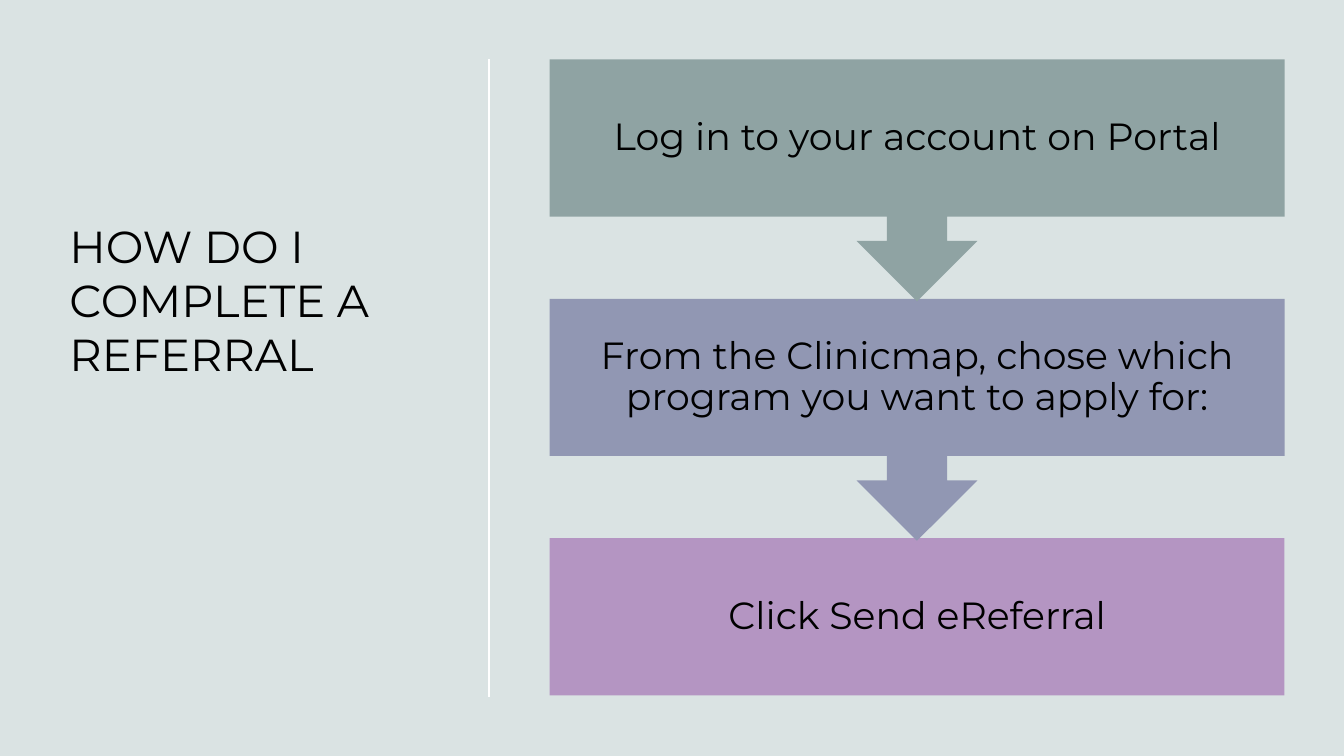
from dataclasses import dataclass

from lxml.etree import SubElement
from pptx import Presentation
from pptx.dml.color import RGBColor
from pptx.enum.shapes import MSO_CONNECTOR, MSO_SHAPE
from pptx.enum.text import MSO_ANCHOR, PP_ALIGN
from pptx.oxml.ns import qn
from pptx.slide import Slide
from pptx.text.text import TextFrame
from pptx.util import Inches, Pt

FONT = "Montserrat"
TOP, LAST = 0.59, 5.34


@dataclass
class Step:
    text: str
    fill: str
    kind: MSO_SHAPE
    height: float


STEPS = [
    Step("Log in to your account on Portal", "8FA3A3", MSO_SHAPE.DOWN_ARROW_CALLOUT, 2.4),
    Step("From the Clinicmap, chose which program you want to apply for:",
         "9197B3", MSO_SHAPE.DOWN_ARROW_CALLOUT, 2.4),
    Step("Click Send eReferral", "B495C2", MSO_SHAPE.RECTANGLE, 1.56),
]


def color(code: str) -> RGBColor:
    return RGBColor.from_string(code)


def write(frame: TextFrame, text: str, size: int) -> None:
    frame.word_wrap = True
    frame.text = text
    for run in frame.paragraphs[0].runs:
        run.font.name = FONT
        run.font.size = Pt(size)
        run.font.color.rgb = color("000000")


def add_title(slide: Slide) -> None:
    box = slide.shapes.add_textbox(Inches(0.59), Inches(2.12), Inches(3.56), Inches(1.75))
    write(box.text_frame, "HOW DO I COMPLETE A REFERRAL", 32)


def add_rule(slide: Slide) -> None:
    rule = slide.shapes.add_connector(
        MSO_CONNECTOR.STRAIGHT, Inches(4.85), Inches(TOP), Inches(4.85), Inches(6.91))
    rule.line.color.rgb = color("FFFFFF")
    rule.line.width = Pt(1)
    SubElement(rule.element.spPr, qn("a:effectLst"))


def add_step(slide: Slide, step: Step, top: float) -> None:
    shape = slide.shapes.add_shape(
        step.kind, Inches(5.45), Inches(top), Inches(7.29), Inches(step.height))
    shape.shadow.inherit = False
    shape.fill.solid()
    shape.fill.fore_color.rgb = color(step.fill)
    shape.line.fill.background()
    frame = shape.text_frame
    write(frame, step.text, 27)
    frame.vertical_anchor = MSO_ANCHOR.MIDDLE
    inset = Inches(0.21)
    frame.margin_left = frame.margin_right = inset
    frame.margin_top = frame.margin_bottom = inset
    frame.paragraphs[0].alignment = PP_ALIGN.CENTER
    frame.paragraphs[0].line_spacing = 0.9


def main() -> None:
    deck = Presentation()
    deck.slide_width = Inches(13.33)
    deck.slide_height = Inches(7.5)
    slide = deck.slides.add_slide(deck.slide_layouts[6])
    slide.background.fill.solid()
    slide.background.fill.fore_color.rgb = color("DAE3E3")
    add_title(slide)
    add_rule(slide)
    pitch = (LAST - TOP) / (len(STEPS) - 1)
    for index, step in reversed(list(enumerate(STEPS))):
        add_step(slide, step, TOP + index * pitch)
    deck.save("out.pptx")


if __name__ == "__main__":
    main()
